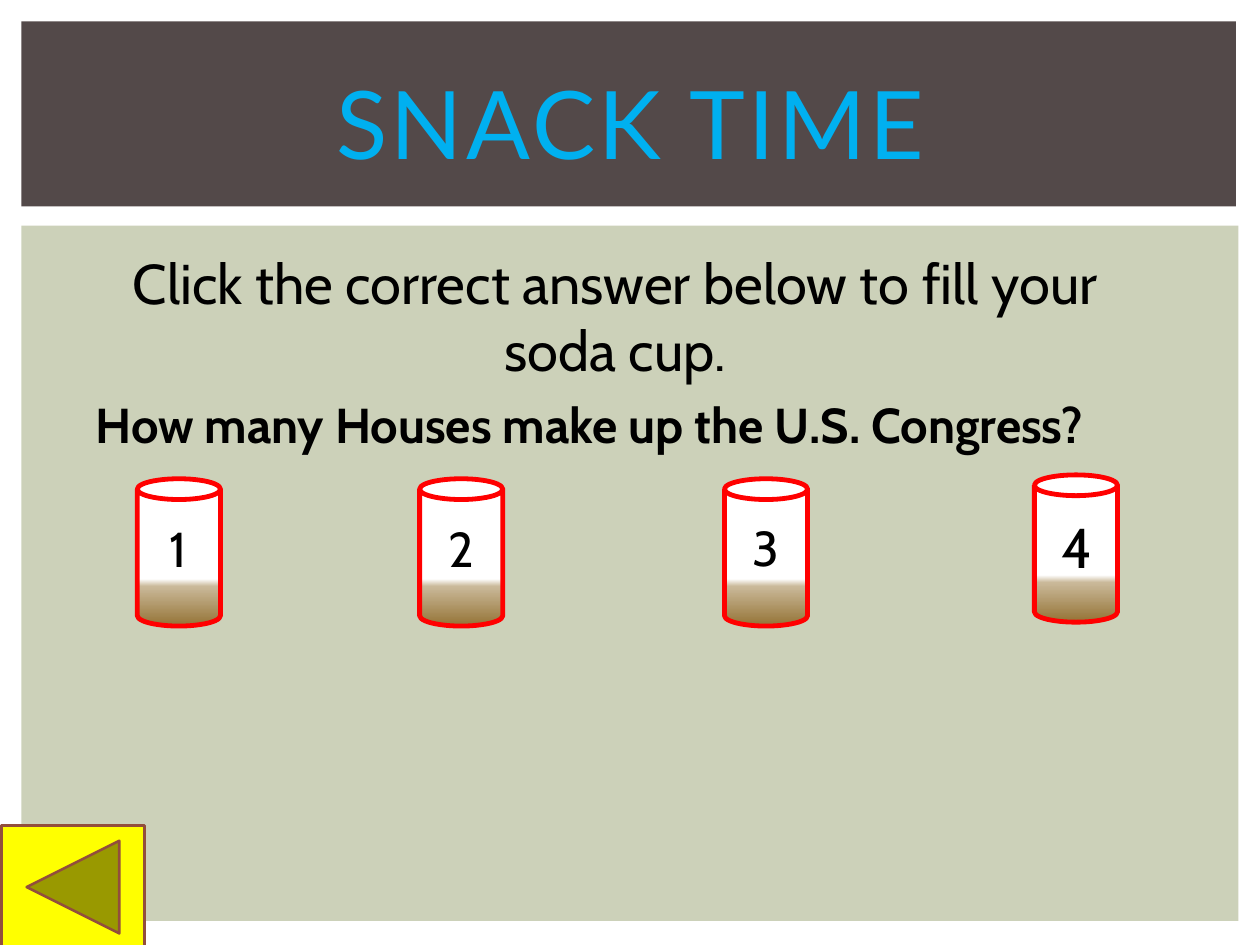
from copy import deepcopy

from pptx import Presentation
from pptx.dml.color import RGBColor
from pptx.enum.shapes import MSO_SHAPE
from pptx.enum.text import MSO_ANCHOR, PP_ALIGN
from pptx.oxml.ns import qn
from pptx.util import Pt

RECTANGLE = MSO_SHAPE.RECTANGLE
CAN = MSO_SHAPE.CAN
BACK_BUTTON = MSO_SHAPE.ACTION_BUTTON_BACK_OR_PREVIOUS
CENTER = PP_ALIGN.CENTER
TOP, MIDDLE = MSO_ANCHOR.TOP, MSO_ANCHOR.MIDDLE

COLORS = {
    "body": "CCD1B9", "banner": "534949", "title": "00B0F0", "text": "000000",
    "cup": "FF0000", "empty": "FFFFFF", "foam": "CAB99A", "soda": "947335",
    "button": "FFFF00", "button edge": "924E3C",
}
RGB = {part: RGBColor.from_string(value) for part, value in COLORS.items()}


def add_part(preset, box, fill=None, edge=None, weight=0):
    part = slide.shapes.add_shape(preset, *map(Pt, box))
    part.shadow.inherit = False
    if fill:
        part.fill.solid()
        part.fill.fore_color.rgb = RGB[fill]
    if edge:
        part.line.color.rgb = RGB[edge]
        part.line.width = Pt(weight)
    else:
        part.line.fill.background()
    return part


def write(holder, words, color, anchor, **font_format):
    frame = holder.text_frame
    frame.word_wrap = True
    frame.vertical_anchor = anchor
    paragraph = frame.paragraphs[0]
    paragraph.alignment = CENTER
    run = paragraph.add_run()
    run.text = words
    for attribute, value in font_format.items():
        setattr(run.font, attribute, value)
    run.font.color.rgb = RGB[color]
    return run


deck = Presentation()
deck.slide_width, deck.slide_height = Pt(720), Pt(540)
slide = deck.slides.add_slide(deck.slide_layouts[5])

add_part(RECTANGLE, (12.24, 128.9, 695.5, 397.4), "body")
add_part(RECTANGLE, (12.24, 12.24, 694, 105.8), "banner")

title = slide.shapes.title
slide.shapes._spTree.append(title._element)
title_box = {"left": 30.24, "top": 28, "width": 660.2, "height": 82.8}
for attribute, value in title_box.items():
    setattr(title, attribute, Pt(value))
heading = write(title, "SNACK TIME", "title", MIDDLE, name="Lato", size=Pt(54))
heading.font._element.set("spc", "200")

cups = [(78.5, 273.6), (239.8, 273.6), (414, 273.6), (591.1, 271.4)]
soda_levels = [(0.68, "empty"), (0.73, "foam"), (1, "soda")]
for left, top in cups:
    cup = add_part(CAN, (left, top, 47.5, 84.2), edge="cup", weight=2.75)
    cup.fill.gradient()
    cup.fill.gradient_angle = 270
    stop_list = cup._element.spPr.find(qn("a:gradFill")).find(qn("a:gsLst"))
    stop_list.append(deepcopy(stop_list[0]))
    for stop, (position, color) in zip(cup.fill.gradient_stops, soda_levels):
        stop.position = position
        stop.color.rgb = RGB[color]

texts = [
    ("Click the correct answer below to fill your soda cup.",
     (36.7, 138.2, 630, 85), 32, False),
    ("How many Houses make up the U.S. Congress?",
     (36.7, 221.8, 599.8, 74.9), 28, True),
    ("1", (72, 293, 59.8, 41), 28, False),
    ("2", (239.8, 293, 48.2, 41), 28, False),
    ("3", (416.9, 292.3, 41.8, 41), 28, False),
    ("4", (588.2, 289.4, 54.7, 46), 32, False),
]
for words, box, size, bold in texts:
    label = slide.shapes.add_textbox(*map(Pt, box))
    write(label, words, "text", TOP, name="Cabin", size=Pt(size), bold=bold)

add_part(BACK_BUTTON, (0.72, 471.6, 82, 70.6), "button", "button edge", 1.5)

deck.save("out.pptx")
